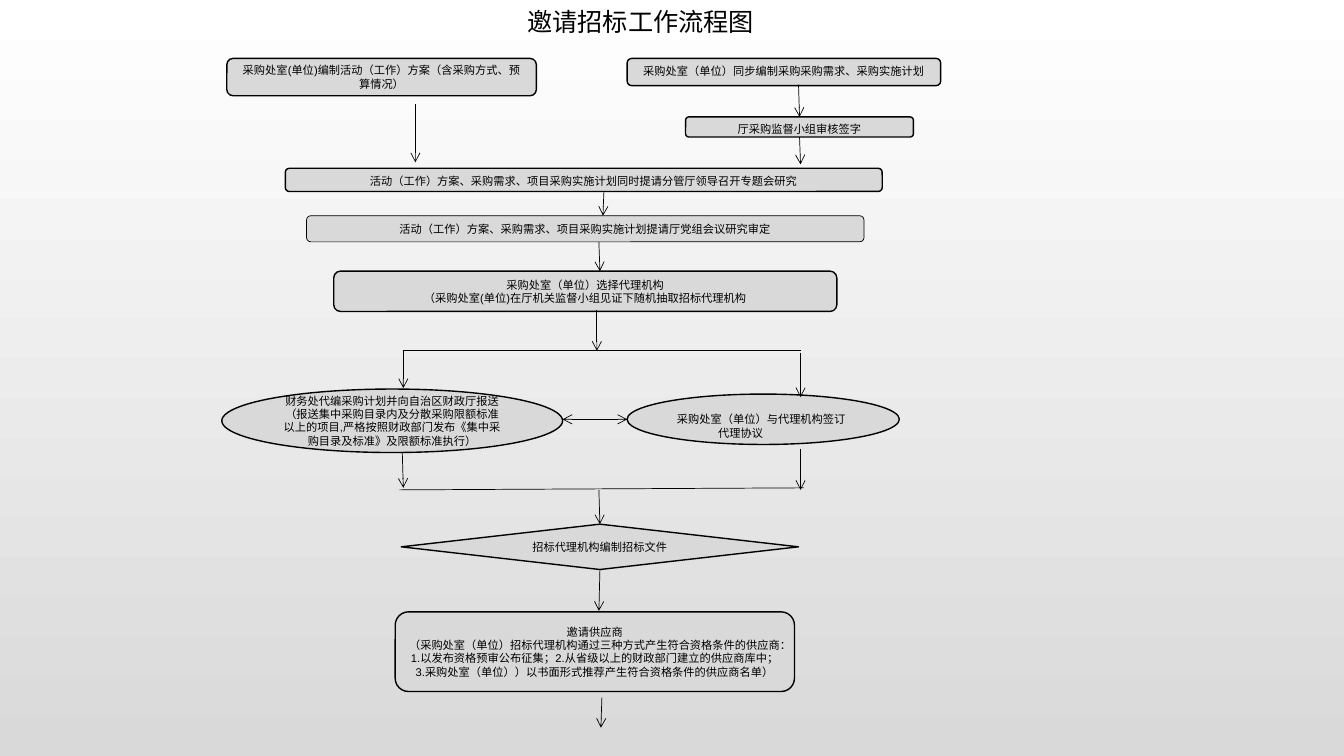
"""Build the flowchart slide for the invited tendering process."""
import pptx
import pptx.chart.data
import pptx.dml.color
import pptx.enum.shapes
import pptx.enum.text
import pptx.oxml.ns
import pptx.util
from lxml import etree

PX = 9144
COLOURS = {"black": "000000", "white": "FFFFFF", "grey": "D9D9D9"}
SHAPES = pptx.enum.shapes.MSO_SHAPE
ALIGN = pptx.enum.text.PP_ALIGN
TOP = pptx.enum.text.MSO_ANCHOR.TOP
MIDDLE = pptx.enum.text.MSO_ANCHOR.MIDDLE


def colour(name):
    return pptx.dml.color.RGBColor.from_string(COLOURS[name])


def write_text(frame, text, size=8, align=ALIGN.CENTER, anchor=MIDDLE, font="Arial"):
    frame.text = text
    frame.word_wrap = True
    frame.auto_size = pptx.enum.text.MSO_AUTO_SIZE.NONE
    frame.vertical_anchor = anchor
    for para in frame.paragraphs:
        para.alignment = align
        for span in para.runs:
            span.font.size = pptx.util.Pt(size)
            span.font.name = font
            span.font.color.rgb = colour("black")


deck = pptx.Presentation()
deck.slide_width, deck.slide_height = 1333 * PX, 750 * PX
page = deck.slides.add_slide(deck.slide_layouts[5])

backdrop = page.background.fill
backdrop.gradient()
backdrop.gradient_angle = 270
for stop, name in zip(backdrop.gradient_stops, ("white", "grey")):
    stop.color.rgb = colour(name)

title = page.shapes.title
title.left, title.top, title.width, title.height = 369 * PX, 1 * PX, 533 * PX, 40 * PX
write_text(title.text_frame, "邀请招标工作流程图", size=18)

ROUND, OVAL, DIAMOND = SHAPES.ROUNDED_RECTANGLE, SHAPES.OVAL, SHAPES.DIAMOND
steps = [
    ("needs", ROUND, (622, 58, 311, 27), 1, TOP, "采购处室（单位）同步编制采购采购需求、采购实施计划"),
    ("audit", ROUND, (680, 116, 226, 20), 1, TOP, "厅采购监督小组审核签字"),
    ("meeting", ROUND, (283, 167, 592, 23), 1, TOP,
     "活动（工作）方案、采购需求、项目采购实施计划同时提请分管厅领导召开专题会研究"),
    ("approval", ROUND, (304, 214, 553, 26), 0.5, TOP,
     "活动（工作）方案、采购需求、项目采购实施计划提请厅党组会议研究审定"),
    ("agency", ROUND, (331, 269, 499, 40), 1, TOP,
     "采购处室（单位）选择代理机构\n（采购处室(单位)在厅机关监督小组见证下随机抽取招标代理机构"),
    ("scheme", ROUND, (225, 58, 307, 37), 1, MIDDLE,
     "采购处室(单位)编制活动（工作）方案（含采购方式、预算情况）"),
    ("report", OVAL, (220, 386, 338, 63), 1, MIDDLE,
     "财务处代编采购计划并向自治区财政厅报送\n"
     "（报送集中采购目录内及分散采购限额标准以上的项目,"
     "严格按照财政部门发布《集中采购目录及标准》及限额标准执行）"),
    ("agreement", OVAL, (622, 391, 270, 50), 1, TOP, "采购处室（单位）与代理机构签订代理协议"),
    ("document", DIAMOND, (398, 520, 394, 45), 1, TOP, "招标代理机构编制招标文件"),
    ("invitation", ROUND, (392, 607, 396, 79), 1, MIDDLE,
     "邀请供应商\n"
     "（采购处室（单位）招标代理机构通过三种方式产生符合资格条件的供应商："
     "1.以发布资格预审公布征集；2.从省级以上的财政部门建立的供应商库中；"
     "3.采购处室（单位））以书面形式推荐产生符合资格条件的供应商名单）"),
]
boxes = {}
for name, kind, place, weight, anchor, text in steps:
    box = page.shapes.add_shape(kind, *(length * PX for length in place))
    box.shadow.inherit = False
    box.fill.solid()
    box.fill.fore_color.rgb = colour("grey")
    box.line.color.rgb = colour("black")
    box.line.width = pptx.util.Pt(weight)
    write_text(box.text_frame, text, anchor=anchor)
    boxes[name] = box

agreement = boxes["agreement"].text_frame
agreement.margin_top = 11 * PX
agreement.paragraphs[0].alignment = ALIGN.LEFT
hanging = agreement.paragraphs[0]._p.get_or_add_pPr()
hanging.set("marL", str(41 * PX))
hanging.set("indent", str(-41 * PX))

TAIL, BOTH, PLAIN = ("tailEnd",), ("headEnd", "tailEnd"), ()
lines = [
    ((412, 103, 412, 161), TAIL, None, None),
    ((792, 84, 793, 116), TAIL, None, ("audit", 0)),
    ((793, 136, 794, 163), TAIL, ("audit", 2), None),
    ((599, 190, 598, 214), TAIL, None, None),
    ((594, 240, 595, 269), TAIL, None, None),
    ((592, 308, 592, 348), TAIL, None, None),
    ((400, 348, 794, 348), PLAIN, None, None),
    ((400, 348, 400, 385), TAIL, None, None),
    ((794, 350, 794, 394), TAIL, None, None),
    ((558, 416, 622, 416), BOTH, None, None),
    ((399, 448, 400, 484), TAIL, None, None),
    ((794, 445, 794, 486), TAIL, None, None),
    ((396, 486, 797, 484), PLAIN, None, None),
    ((594, 486, 594, 520), TAIL, None, ("document", 0)),
    ((595, 565, 594, 606), TAIL, ("document", 2), None),
    ((597, 692, 596, 722), TAIL, None, None),
]
for ends, heads, begin, end in lines:
    line = page.shapes.add_connector(
        pptx.enum.shapes.MSO_CONNECTOR.STRAIGHT, *(length * PX for length in ends))
    line.line.color.rgb = colour("black")
    line.line.width = pptx.util.Pt(0.5)
    if begin:
        line.begin_connect(boxes[begin[0]], begin[1])
    if end:
        line.end_connect(boxes[end[0]], end[1])
    outline = line.line._get_or_add_ln()
    for head in heads:
        etree.SubElement(outline, pptx.oxml.ns.qn("a:" + head), type="arrow")
    etree.SubElement(line._element.spPr, pptx.oxml.ns.qn("a:effectLst"))

deck.save("out.pptx")
